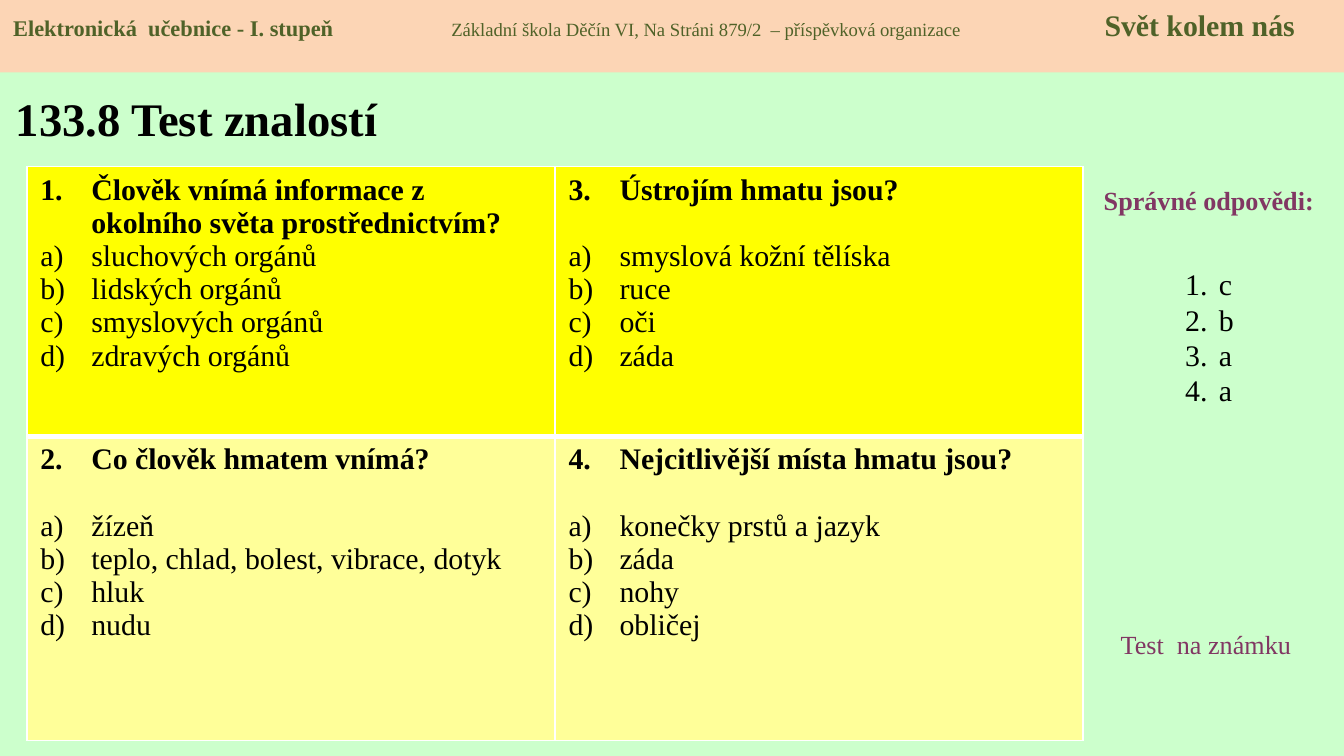
from dataclasses import dataclass

from lxml import etree
from pptx import Presentation
from pptx.dml.color import RGBColor
from pptx.enum.shapes import MSO_SHAPE
from pptx.enum.text import MSO_ANCHOR, PP_ALIGN
from pptx.oxml.ns import qn
from pptx.util import Inches, Pt


@dataclass(frozen=True)
class Theme:
    font: str = "Times New Roman"
    background: str = "CCFFCC"
    band: str = "FCD5B5"
    band_text: str = "4F6228"
    text: str = "000000"
    accent: str = "813763"
    rule: str = "FFFFFF"
    rows: tuple = ("FFFF00", "FFFF99")
    title: int = 25
    body: int = 16
    label: int = 14
    band_name: int = 12
    band_school: int = 10


THEME = Theme()
WIDTH, HEIGHT = Inches(10), Inches(5.625)

# Each question: (text, options, leaves a line before the options)
QUESTIONS = [
    ("Člověk vnímá informace z okolního světa prostřednictvím?",
     ["sluchových orgánů", "lidských orgánů", "smyslových orgánů", "zdravých orgánů"], False),
    ("Co člověk hmatem vnímá?",
     ["žízeň", "teplo, chlad, bolest, vibrace, dotyk", "hluk", "nudu"], True),
    ("Ústrojím hmatu jsou?",
     ["smyslová kožní tělíska", "ruce", "oči", "záda"], True),
    ("Nejcitlivější místa hmatu jsou?",
     ["konečky prstů a jazyk", "záda", "nohy", "obličej"], True),
]
ANSWERS = ["c", "b", "a", "a"]


def place(x, y, w, h):
    """Turn percentages of the slide into a position and size."""
    return [int(side * share / 100)
            for side, share in zip((WIDTH, HEIGHT, WIDTH, HEIGHT), (x, y, w, h))]


def style(font, size, color, bold=False):
    font.name, font.size, font.bold = THEME.font, Pt(size), bold
    font.color.rgb = RGBColor.from_string(color)


def number(p, scheme, indent, start=1):
    """Give a paragraph automatic numbering with a hanging indent."""
    ppr = p._p.get_or_add_pPr()
    ppr.set("marL", str(Inches(indent)))
    ppr.set("indent", str(-Inches(indent)))
    bullet = etree.SubElement(ppr, qn("a:buAutoNum"), type=scheme)
    if start > 1:
        bullet.set("startAt", str(start))


def add_lines(tf, lines, scheme, indent, spacing):
    """Fill an empty frame with numbered lines of body text."""
    for i, line in enumerate(lines):
        p = tf.paragraphs[0] if i == 0 else tf.add_paragraph()
        p.text = line
        p.line_spacing = Pt(spacing)
        number(p, scheme, indent)
        style(p.runs[0].font, THEME.body, THEME.text)


def add_text(slide, box, text, size, color, bold=False, align=PP_ALIGN.LEFT,
             anchor=MSO_ANCHOR.TOP):
    tf = slide.shapes.add_textbox(*place(*box)).text_frame
    tf.word_wrap, tf.vertical_anchor = True, anchor
    p = tf.paragraphs[0]
    p.text, p.alignment = text, align
    style(p.runs[0].font, size, color, bold)


def add_header(slide):
    band = slide.shapes.add_shape(MSO_SHAPE.RECTANGLE, *place(0, 0, 100, 9.6))
    band.shadow.inherit = False
    band.fill.solid()
    band.fill.fore_color.rgb = RGBColor.from_string(THEME.band)
    band.line.fill.background()
    tf = band.text_frame
    tf.vertical_anchor = MSO_ANCHOR.TOP
    p = tf.paragraphs[0]
    p.alignment = PP_ALIGN.LEFT
    tabs = etree.SubElement(p._p.get_or_add_pPr(), qn("a:tabLst"))
    for stop in (3.26, 8.12):
        etree.SubElement(tabs, qn("a:tab"), pos=str(Inches(stop)), algn="l")
    for text, size, bold in (
        ("Elektronická  učebnice - I. stupeň\t", THEME.band_name, True),
        ("Základní škola Děčín VI, Na Stráni 879/2  – příspěvková organizace\t",
         THEME.band_school, False),
        ("Svět kolem nás", THEME.body, True),
    ):
        r = p.add_run()
        r.text = text
        style(r.font, size, THEME.band_text, bold)


def set_borders(cell, **widths):
    """Add cell borders, which come before the fill in the cell's properties."""
    tcpr = cell._tc.get_or_add_tcPr()
    for i, side in enumerate("LRTB"):
        line = etree.Element(qn(f"a:ln{side}"), w=str(Pt(widths.get(side, 1))))
        fill = etree.SubElement(line, qn("a:solidFill"))
        etree.SubElement(fill, qn("a:srgbClr"), val=THEME.rule)
        tcpr.insert(i, line)


def fill_question(cell, index):
    question, options, gap = QUESTIONS[index]
    tf = cell.text_frame
    add_lines(tf, [question] + options, "alphaLcParenR", 0.38, 17.8)
    head, first = tf.paragraphs[:2]
    bullet = head._p.pPr.find(qn("a:buAutoNum"))
    bullet.set("type", "arabicPeriod")
    bullet.set("startAt", str(index + 1))
    head.runs[0].font.bold = True
    if gap:
        first.space_before = Pt(17.8)


def add_questions(slide):
    x, y, w, h = place(2, 22.04, 78.6, 75.91)
    table = slide.shapes.add_table(2, 2, x, y, w, h).table
    table.first_row = table.horz_banding = False
    for row, share in zip(table.rows, (0.47, 0.53)):
        row.height = int(h * share)
    # Questions run down the columns
    for index in range(len(QUESTIONS)):
        col, row = divmod(index, 2)
        cell = table.cell(row, col)
        cell.fill.solid()
        cell.fill.fore_color.rgb = RGBColor.from_string(THEME.rows[row])
        set_borders(cell, **({"B": 3} if row == 0 else {"T": 3}))
        fill_question(cell, index)


def add_answers(slide):
    tf = slide.shapes.add_textbox(*place(87.2, 29.33, 5.5, 35.38)).text_frame
    tf.word_wrap = True
    tf.margin_top = Inches(0.33)
    add_lines(tf, ANSWERS, "arabicPeriod", 0.25, 19)


def main():
    prs = Presentation()
    prs.slide_width, prs.slide_height = WIDTH, HEIGHT
    slide = prs.slides.add_slide(prs.slide_layouts[6])
    slide.background.fill.solid()
    slide.background.fill.fore_color.rgb = RGBColor.from_string(THEME.background)

    # Heading and test
    add_text(slide, (0.2, 9.78, 31.9, 11.56), "133.8 Test znalostí",
             THEME.title, THEME.text, bold=True, anchor=MSO_ANCHOR.MIDDLE)
    add_questions(slide)

    # Answer column
    add_text(slide, (80.5, 23.47, 18.9, 6.04), "Správné odpovědi:",
             THEME.label, THEME.accent, bold=True, align=PP_ALIGN.CENTER)
    add_answers(slide)
    add_text(slide, (82.4, 82.31, 15.7, 6.04), "Test  na známku",
             THEME.label, THEME.accent)

    add_header(slide)
    prs.save("out.pptx")


if __name__ == "__main__":
    main()
